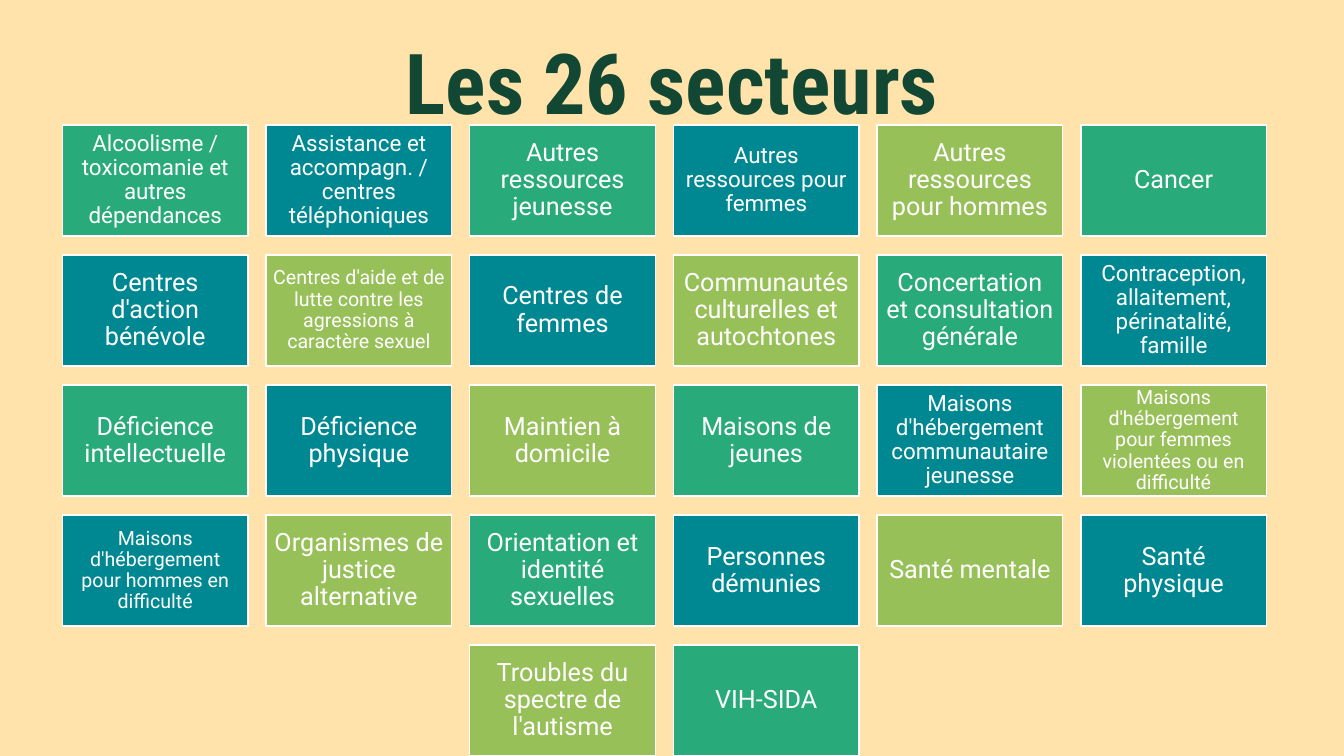
from dataclasses import dataclass

from pptx import Presentation
from pptx import util as u
from pptx.dml import color
from pptx.enum import shapes, text


@dataclass(frozen=True)
class Theme:
    background: str = "FFE3AB"
    title: str = "124733"
    white: str = "FFFFFF"
    green: str = "28AA7A"
    teal: str = "008892"
    lime: str = "97C059"
    title_font: str = "Roboto Condensed"
    body_font: str = "Roboto"
    title_size: int = 60
    large: int = 18
    medium: int = 16
    small: int = 14
    line_spacing: float = 0.9


@dataclass(frozen=True)
class Grid:
    columns: int = 6
    left: float = 0.62
    top: float = 1.24
    width: float = 1.84
    height: float = 1.1
    column_gap: float = 0.18
    row_gap: float = 0.19

    def cell(self, column, row):
        return (
            u.Inches(self.left + column * (self.width + self.column_gap)),
            u.Inches(self.top + row * (self.height + self.row_gap)),
            u.Inches(self.width),
            u.Inches(self.height),
        )


class SectorSlide:
    def __init__(self, presentation, theme, grid):
        self.theme = theme
        self.grid = grid
        self.slide_width = presentation.slide_width
        self.slide_height = presentation.slide_height
        self.slide = presentation.slides.add_slide(presentation.slide_layouts[5])
        self.paint(self.slide.background.fill, theme.background)

    def paint(self, fill, value):
        fill.solid()
        fill.fore_color.rgb = color.RGBColor.from_string(value)

    def set_text(self, shape, wording, font_name, size, value, bold=False):
        frame = shape.text_frame
        frame.text = wording
        frame.word_wrap = True
        frame.auto_size = text.MSO_AUTO_SIZE.NONE
        frame.vertical_anchor = text.MSO_ANCHOR.MIDDLE
        paragraph = frame.paragraphs[0]
        paragraph.alignment = text.PP_ALIGN.CENTER
        paragraph.line_spacing = self.theme.line_spacing
        font = paragraph.font
        font.name = font_name
        font.size = u.Pt(size)
        font.bold = bold
        font.color.rgb = color.RGBColor.from_string(value)

    def title(self, wording, left, top, width, height):
        shape = self.slide.shapes.title
        shape.left = int(self.slide_width * left)
        shape.top = int(self.slide_height * top)
        shape.width = int(self.slide_width * width)
        shape.height = int(self.slide_height * height)
        theme = self.theme
        self.set_text(shape, wording, theme.title_font, theme.title_size, theme.title, bold=True)

    def tile(self, column, row, wording, fill, size):
        shape = self.slide.shapes.add_shape(
            shapes.MSO_SHAPE.RECTANGLE, *self.grid.cell(column, row)
        )
        shape.shadow.inherit = False
        self.paint(shape.fill, fill)
        self.paint(shape.line.fill, self.theme.white)
        shape.line.width = u.Pt(1)
        frame = shape.text_frame
        inset = u.Inches(size / 250)
        frame.margin_left = frame.margin_right = inset
        frame.margin_top = frame.margin_bottom = inset
        self.set_text(shape, wording, self.theme.body_font, size, self.theme.white)

    def tiles(self, sectors):
        columns = self.grid.columns
        for index, (wording, fill, size) in enumerate(sectors):
            row, column = divmod(index, columns)
            in_row = min(columns, len(sectors) - row * columns)
            self.tile(column + (columns - in_row) // 2, row, wording, fill, size)


THEME = Theme()
GREEN, TEAL, LIME = THEME.green, THEME.teal, THEME.lime
LARGE, MEDIUM, SMALL = THEME.large, THEME.medium, THEME.small

SECTORS = [
    ("Alcoolisme / toxicomanie et autres dépendances", GREEN, MEDIUM),
    ("Assistance et accompagn. / centres téléphoniques", TEAL, MEDIUM),
    ("Autres ressources jeunesse", GREEN, LARGE),
    ("Autres ressources pour femmes", TEAL, MEDIUM),
    ("Autres ressources pour hommes", LIME, LARGE),
    ("Cancer", GREEN, LARGE),
    ("Centres d'action bénévole", TEAL, LARGE),
    ("Centres d'aide et de lutte contre les agressions à caractère sexuel", LIME, SMALL),
    ("Centres de femmes", TEAL, LARGE),
    ("Communautés culturelles et autochtones", LIME, LARGE),
    ("Concertation et consultation générale", GREEN, LARGE),
    ("Contraception, allaitement, périnatalité, famille", TEAL, MEDIUM),
    ("Déficience intellectuelle", GREEN, LARGE),
    ("Déficience physique", TEAL, LARGE),
    ("Maintien à domicile", LIME, LARGE),
    ("Maisons de jeunes", GREEN, LARGE),
    ("Maisons d'hébergement communautaire jeunesse", TEAL, MEDIUM),
    ("Maisons d'hébergement pour femmes violentées ou en difficulté", LIME, SMALL),
    ("Maisons d'hébergement pour hommes en difficulté", TEAL, SMALL),
    ("Organismes de justice alternative", LIME, LARGE),
    ("Orientation et identité sexuelles", GREEN, LARGE),
    ("Personnes démunies", TEAL, LARGE),
    ("Santé mentale", LIME, LARGE),
    ("Santé physique", TEAL, LARGE),
    ("Troubles du spectre de l'autisme", LIME, LARGE),
    ("VIH-SIDA", GREEN, LARGE),
]


def main():
    presentation = Presentation()
    presentation.slide_width = u.Inches(13.33)
    presentation.slide_height = u.Inches(7.5)
    slide = SectorSlide(presentation, THEME, Grid())
    slide.title("Les 26 secteurs", 0.07, 0.02, 0.86, 0.19)
    slide.tiles(SECTORS)
    presentation.save("out.pptx")


if __name__ == "__main__":
    main()
